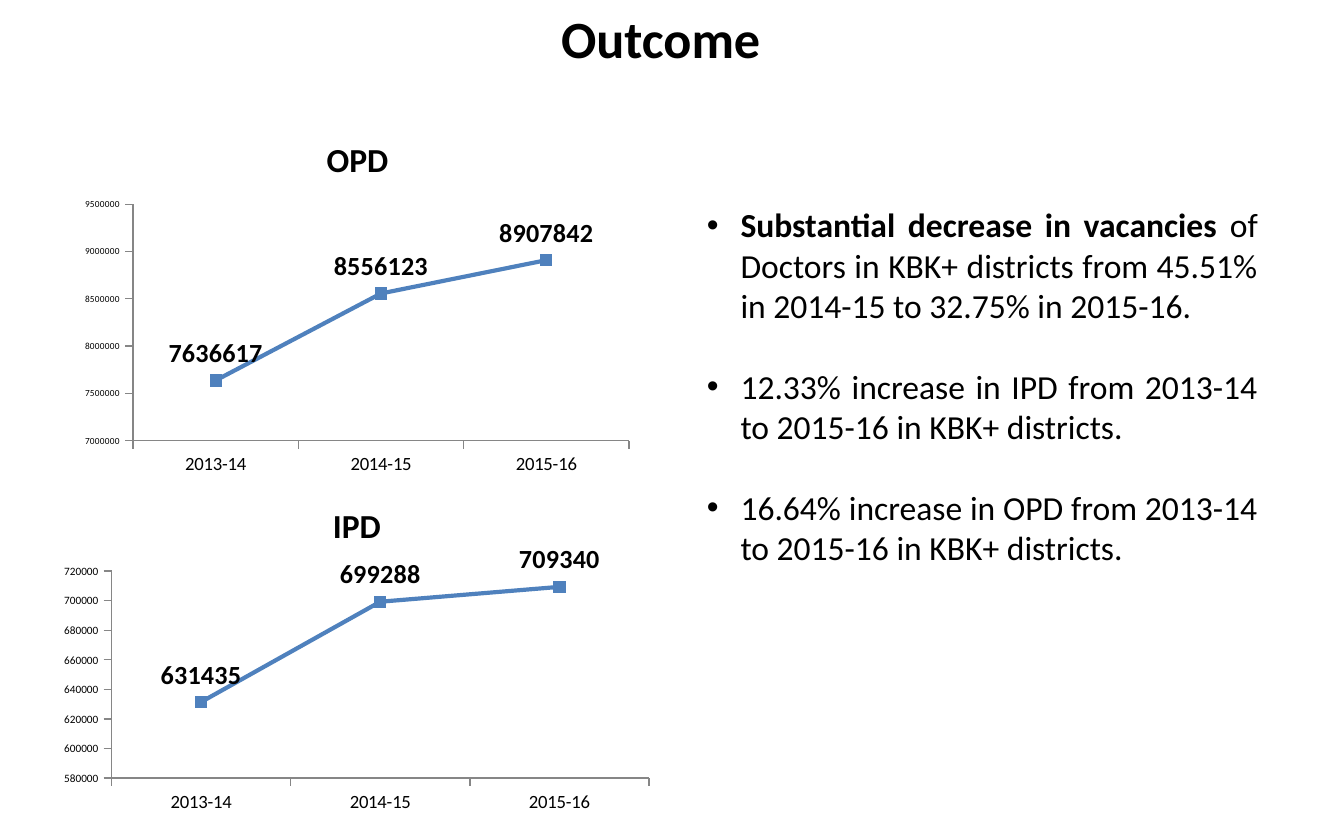
from lxml import etree
from pptx import Presentation
from pptx.chart.data import CategoryChartData
from pptx.dml.color import RGBColor
from pptx.enum import chart as ch, text
from pptx.oxml import ns
from pptx.util import Emu, Inches, Pt

COLORS = {"text": "000000", "line": "4F81BD", "axis": "868686"}
FONT = "Calibri"
YEARS = ["2013-14", "2014-15", "2015-16"]


def style_font(font, size, bold=False):
    font.name, font.size, font.bold = FONT, Pt(size), bold
    font.color.rgb = RGBColor.from_string(COLORS["text"])


def write(p, words, size=18, bold=False):
    r = p.add_run()
    r.text = words
    style_font(r.font, size, bold)


class Slide:
    def __init__(self, prs):
        self.s = prs.slides.add_slide(prs.slide_layouts[1])

    def frame(self, sp, box):
        sp.left, sp.top, sp.width, sp.height = (Inches(v) for v in box)
        tf = sp.text_frame
        tf.word_wrap = True
        tf.auto_size = text.MSO_AUTO_SIZE.SHAPE_TO_FIT_TEXT
        tf.vertical_anchor = text.MSO_ANCHOR.TOP
        return tf

    def title(self, words, box):
        p = self.frame(self.s.shapes.title, box).paragraphs[0]
        p.alignment = text.PP_ALIGN.CENTER
        write(p, words, size=28, bold=True)

    def bullets(self, items, box, gap=21.6):
        tf = self.frame(self.s.placeholders[1], box)
        for i, runs in enumerate(items):
            p = tf.add_paragraph() if i else tf.paragraphs[0]
            p.alignment = text.PP_ALIGN.JUSTIFY
            p.space_before = Pt(gap if i else 0)
            pPr = p._p.get_or_add_pPr()
            pPr.set("marL", str(Inches(0.25)))
            pPr.set("indent", str(Inches(-0.25)))
            for words, bold in runs:
                write(p, words, bold=bold)

    def line_chart(self, name, values, box, plot_box, scale, tick_size):
        data = CategoryChartData()
        data.categories = YEARS
        data.add_series(name, values)
        chart = self.s.shapes.add_chart(
            ch.XL_CHART_TYPE.LINE_MARKERS_STACKED,
            *(Inches(v) for v in box), data).chart
        style_font(chart.font, 10)
        chart.has_legend = False
        chart.has_title = True
        write(chart.chart_title.text_frame.paragraphs[0], name, bold=True)
        chart.chart_title.include_in_layout = False

        # Axes
        low, high, step = scale
        val, cat = chart.value_axis, chart.category_axis
        val.minimum_scale, val.maximum_scale, val.major_unit = low, high, step
        val.has_major_gridlines = False
        for axis, size in ((val, tick_size), (cat, 10)):
            axis.major_tick_mark = ch.XL_TICK_MARK.OUTSIDE
            axis.format.line.color.rgb = RGBColor.from_string(COLORS["axis"])
            style_font(axis.tick_labels.font, size)

        # Line, markers and labels
        plot = chart.plots[0]
        plot.vary_by_categories = False
        series = plot.series[0]
        series.smooth = False
        blue = RGBColor.from_string(COLORS["line"])
        series.format.line.width = Pt(2.25)
        series.format.line.color.rgb = blue
        marker = series.marker
        marker.style, marker.size = ch.XL_MARKER_STYLE.SQUARE, 6
        marker.format.fill.solid()
        marker.format.fill.fore_color.rgb = blue
        marker.format.line.color.rgb = blue
        labels = series.data_labels
        labels.show_value = True
        labels.position = ch.XL_LABEL_POSITION.ABOVE
        style_font(labels.font, 14, bold=True)
        self.place_plot(chart, box, plot_box)

    def place_plot(self, chart, box, plot_box):
        area = chart._chartSpace.find(".//" + ns.qn("c:plotArea"))
        for old in area.findall(ns.qn("c:layout")):
            area.remove(old)
        layout = etree.Element(ns.qn("c:layout"))
        manual = etree.SubElement(layout, ns.qn("c:manualLayout"))
        x, y, w, h = plot_box
        left, top, width, height = box
        settings = {"layoutTarget": "inner", "xMode": "edge", "yMode": "edge",
                    "x": (x - left) / width, "y": (y - top) / height,
                    "w": w / width, "h": h / height}
        for tag, value in settings.items():
            etree.SubElement(manual, ns.qn("c:" + tag)).set("val", str(value))
        area.insert(0, layout)


def main():
    prs = Presentation()
    prs.slide_width, prs.slide_height = Inches(10), Inches(6.25)
    slide = Slide(prs)
    slide.title("Outcome ", (0.31, 0, 9.3, 0.57))

    # Patient charts
    slide.line_chart("OPD", (7636617, 8556123, 8907842),
                     (0.55, 0.86, 4.22, 2.73), (0.99, 1.52, 3.69, 1.76),
                     (7000000, 9500000, 500000), tick_size=5)
    slide.line_chart("IPD", (631435, 699288, 709340),
                     (0.39, 3.59, 4.53, 2.5), (0.83, 4.25, 4, 1.54),
                     (580000, 720000, 20000), tick_size=6)

    # Findings
    slide.bullets([
        [("Substantial decrease in vacancies", True),
         (" of Doctors in KBK+ districts from 45.51% in 2014-15 "
          "to 32.75% in 2015-16.", False)],
        [("12.33% increase in IPD from 2013-14 to 2015-16 "
          "in KBK+ districts.", False)],
        [("16.64% increase in OPD from 2013-14 to 2015-16 "
          "in KBK+ districts.", False)],
    ], (5.16, 1.47, 4.3, 2.83))
    prs.save("out.pptx")


if __name__ == "__main__":
    main()
